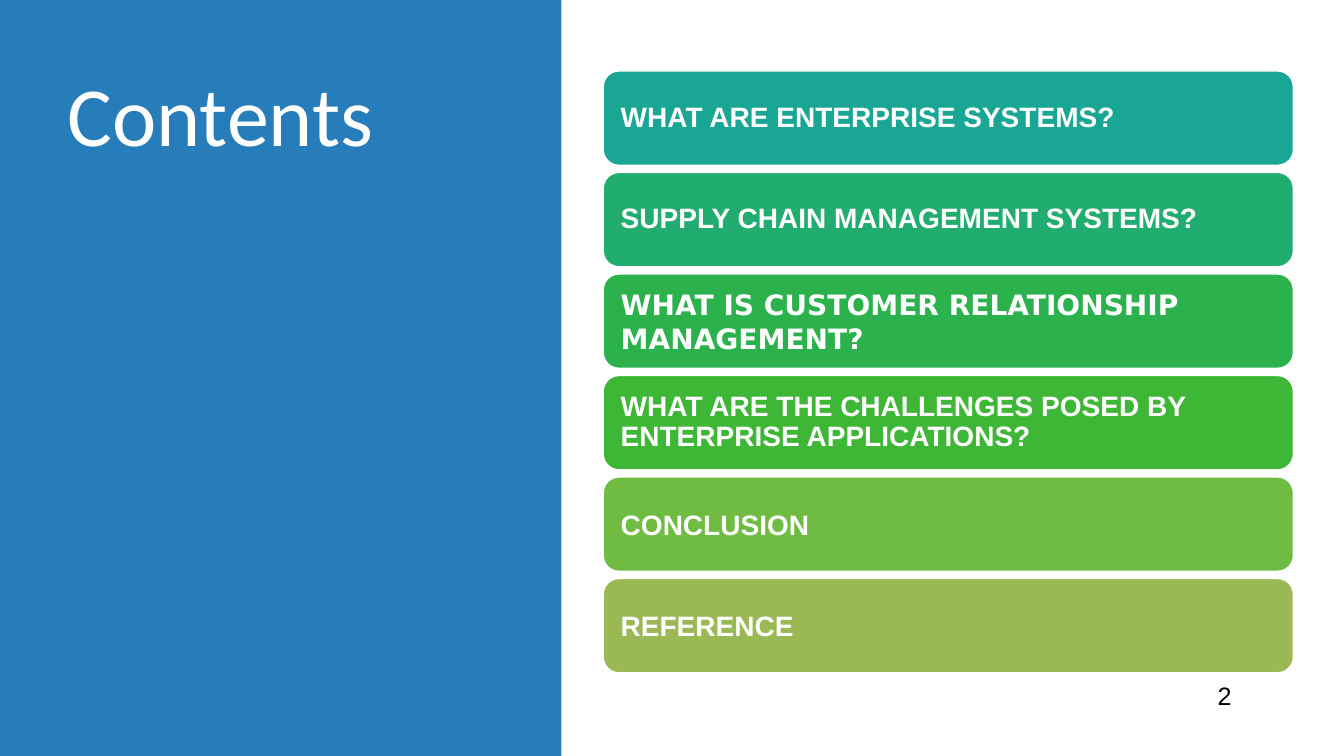
from pptx import Presentation
from pptx.dml.color import RGBColor
from pptx.enum.shapes import MSO_SHAPE as Preset
from pptx.enum.text import MSO_ANCHOR as Anchor, PP_ALIGN as Align
from pptx.util import Pt

TITLE = "Contents"
PAGE_NUMBER = "2"
# wording, colour name, font, line spacing
TOPICS = [
    ("WHAT ARE ENTERPRISE SYSTEMS?", "teal", "Arial", 0.9),
    ("SUPPLY CHAIN MANAGEMENT SYSTEMS?", "sea", "Arial", 0.9),
    ("WHAT IS CUSTOMER RELATIONSHIP MANAGEMENT?", "emerald", "DejaVu Sans", 1.0),
    ("WHAT ARE THE CHALLENGES POSED BY ENTERPRISE APPLICATIONS?", "green", "Arial", 0.9),
    ("CONCLUSION", "lime", "Arial", 1.0),
    ("REFERENCE", "olive", "Arial", 1.0),
]
COLORS = {
    "panel": "277DBA", "white": "FFFFFF", "black": "000000",
    "teal": "19A695", "sea": "22AD70", "emerald": "2BB24D",
    "green": "3FB736", "lime": "70BB42", "olive": "9AB854",
}

SLIDE_WIDTH, SLIDE_HEIGHT = 960, 540
PANEL_WIDTH = 401
BAR_LEFT, BAR_TOP, BAR_WIDTH, BAR_HEIGHT = 430.9, 50.7, 493, 67.4
BAR_STEP = 72.5
BAR_INSET = 9.2


def color(name):
    return RGBColor.from_string(COLORS[name])


def write(shape, text, font, size, color_name, bold=False, spacing=1.0, anchor=Anchor.TOP):
    """Put one left-aligned run into the shape's first paragraph."""
    frame = shape.text_frame
    frame.word_wrap = True
    frame.vertical_anchor = anchor
    paragraph = frame.paragraphs[0]
    paragraph.alignment = Align.LEFT
    paragraph.line_spacing = spacing
    run = paragraph.add_run()
    run.text = text
    run.font.name = font
    run.font.size = Pt(size)
    run.font.bold = bold
    run.font.color.rgb = color(color_name)


def add_block(slide, preset, box, fill):
    shape = slide.shapes.add_shape(preset, *map(Pt, box))
    shape.shadow.inherit = False
    shape.fill.solid()
    shape.fill.fore_color.rgb = color(fill)
    return shape


def add_title(slide):
    title = slide.shapes.title
    title.left, title.top, title.width, title.height = map(Pt, (41, 49, 299.5, 433.5))
    write(title, TITLE, "Calibri", 60, "white", spacing=0.9)
    return title


def add_topic(slide, index, topic):
    text, fill, font, spacing = topic
    box = (BAR_LEFT, BAR_TOP + index * BAR_STEP, BAR_WIDTH, BAR_HEIGHT)
    bar = add_block(slide, Preset.ROUNDED_RECTANGLE, box, fill)
    bar.line.color.rgb = color("white")
    bar.line.width = Pt(1)
    frame = bar.text_frame
    frame.margin_left = frame.margin_right = Pt(BAR_INSET)
    frame.margin_top = frame.margin_bottom = Pt(BAR_INSET)
    write(bar, text, font, 20, "white", True, spacing, Anchor.MIDDLE)


def main():
    presentation = Presentation()
    presentation.slide_width, presentation.slide_height = Pt(SLIDE_WIDTH), Pt(SLIDE_HEIGHT)
    slide = presentation.slides.add_slide(presentation.slide_layouts[5])

    panel = add_block(slide, Preset.RECTANGLE, (0, 0, PANEL_WIDTH, SLIDE_HEIGHT), "panel")
    panel.line.fill.background()
    title = add_title(slide)
    panel._element.addnext(title._element)  # the title lies in front of the panel

    for index, topic in enumerate(TOPICS):
        add_topic(slide, index, topic)

    number_box = slide.shapes.add_textbox(Pt(862.6), Pt(482.4), Pt(61.2), Pt(29))
    write(number_box, PAGE_NUMBER, "Arial", 18, "black")
    presentation.save("out.pptx")


if __name__ == "__main__":
    main()
